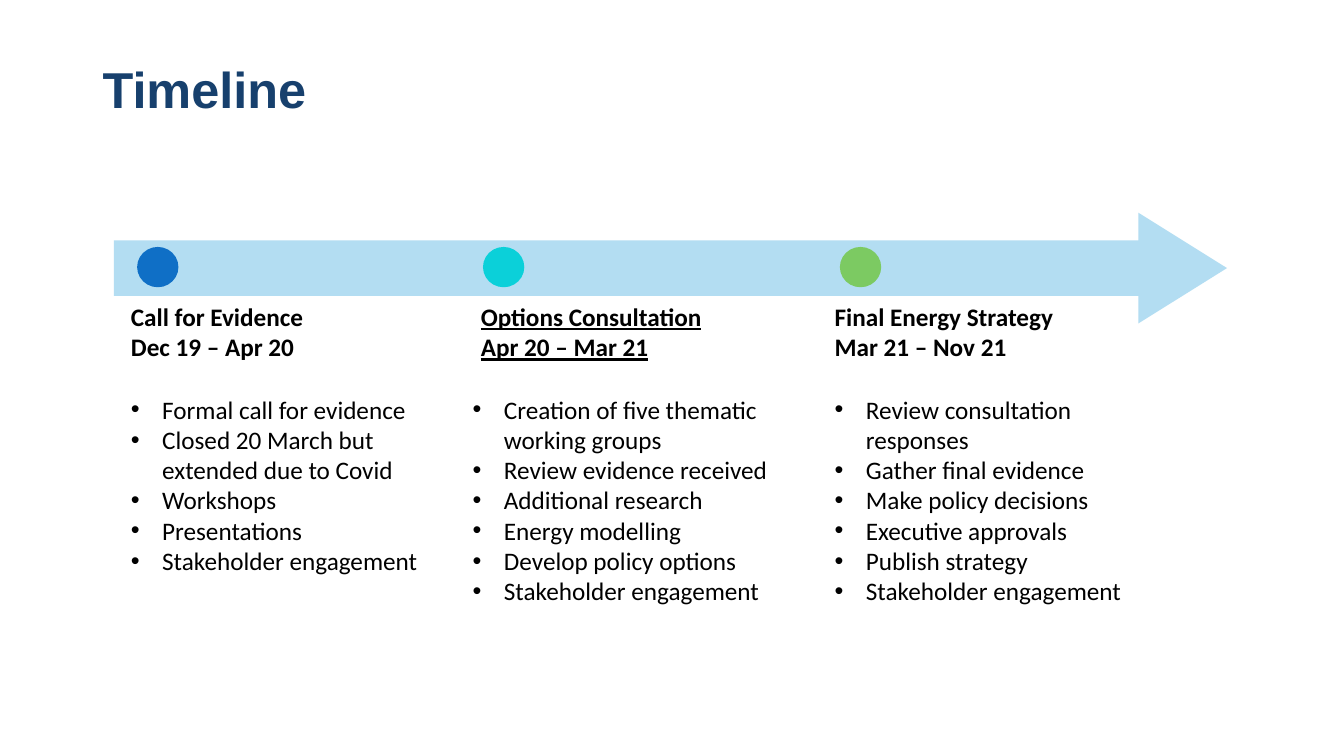
from dataclasses import dataclass

from lxml import etree
from pptx import Presentation
from pptx import util as u
from pptx.dml.color import RGBColor
from pptx.enum import shapes, text
from pptx.oxml import ns

NAVY = RGBColor(0x17, 0x40, 0x6D)
PALE = RGBColor(0xB3, 0xDD, 0xF2)
BLUE = RGBColor(0x0F, 0x6F, 0xC6)
TEAL = RGBColor(0x0B, 0xD0, 0xD9)
GREEN = RGBColor(0x7C, 0xCA, 0x62)
BLACK = RGBColor(0, 0, 0)

TITLE = {"name": "Arial", "size": u.Pt(36), "bold": True}
BODY = {"name": "Calibri", "size": u.Pt(18)}
HEAD = {**BODY, "bold": True}
ACTIVE = {**HEAD, "underline": True}


@dataclass(frozen=True)
class Box:
    left: float
    top: float
    width: float
    height: float

    def frame(self) -> list[u.Length]:
        return [u.Inches(v) for v in (self.left, self.top, self.width, self.height)]


@dataclass(frozen=True)
class Phase:
    color: RGBColor
    dot: float
    head: Box
    style: dict
    label: list[str]
    body: Box
    tasks: list[str]


PHASES = [
    Phase(BLUE, 1.36, Box(1.2, 2.94, 2.96, 0.71), HEAD,
          ["Call for Evidence", "Dec 19 – Apr 20"],
          Box(1.2, 3.86, 3.05, 1.92),
          ["Formal call for evidence",
           "Closed 20 March but extended due to Covid",
           "Workshops", "Presentations", "Stakeholder engagement"]),
    Phase(TEAL, 4.79, Box(4.67, 2.94, 3.08, 0.71), ACTIVE,
          ["Options Consultation", "Apr 20 – Mar 21"],
          Box(4.59, 3.86, 3.26, 2.22),
          ["Creation of five thematic working groups",
           "Review evidence received", "Additional research",
           "Energy modelling", "Develop policy options",
           "Stakeholder engagement"]),
    Phase(GREEN, 8.33, Box(8.18, 2.94, 2.96, 0.71), HEAD,
          ["Final Energy Strategy", "Mar 21 – Nov 21"],
          Box(8.18, 3.86, 3.11, 2.52),
          ["Review consultation responses", "Gather final evidence",
           "Make policy decisions", "Executive approvals",
           "Publish strategy", "Stakeholder engagement"]),
]


def add_bullet(para) -> None:
    props = para._p.get_or_add_pPr()
    indent = u.Inches(0.31)
    props.set("marL", str(indent))
    props.set("indent", str(-indent))
    etree.SubElement(props, ns.qn("a:buFont")).set("typeface", "Arial")
    etree.SubElement(props, ns.qn("a:buChar")).set("char", "•")


def add_text(slide, box: Box, lines: list[str], style: dict,
             color: RGBColor = BLACK, bullets: bool = False):
    frame = slide.shapes.add_textbox(*box.frame()).text_frame
    frame.word_wrap = True
    frame.text = "\n".join(lines)
    for para in frame.paragraphs:
        if bullets:
            add_bullet(para)
        for run in para.runs:
            for key, value in style.items():
                setattr(run.font, key, value)
            run.font.color.rgb = color
    return frame


def add_shape(slide, kind, box: Box, color: RGBColor):
    shape = slide.shapes.add_shape(kind, *box.frame())
    shape.shadow.inherit = False
    shape.fill.solid()
    shape.fill.fore_color.rgb = color
    shape.line.fill.background()
    return shape


def main() -> None:
    deck = Presentation()
    deck.slide_width = u.Inches(13.33)
    deck.slide_height = u.Inches(7.5)
    slide = deck.slides.add_slide(deck.slide_layouts[6])

    title = add_text(slide, Box(0.92, 0.4, 9.62, 1.03), ["Timeline"], TITLE, NAVY)
    title.vertical_anchor = text.MSO_ANCHOR.MIDDLE
    title.paragraphs[0].line_spacing = 0.9

    kinds = shapes.MSO_SHAPE
    arrow = add_shape(slide, kinds.RIGHT_ARROW, Box(1.13, 2.11, 11.04, 1.1), PALE)
    arrow.adjustments[0] = 0.5
    arrow.adjustments[1] = 0.8

    for phase in PHASES:
        add_shape(slide, kinds.OVAL, Box(phase.dot, 2.45, 0.41, 0.4), phase.color)
        add_text(slide, phase.head, phase.label, phase.style)
        add_text(slide, phase.body, phase.tasks, BODY, bullets=True)

    deck.save("out.pptx")


if __name__ == "__main__":
    main()
